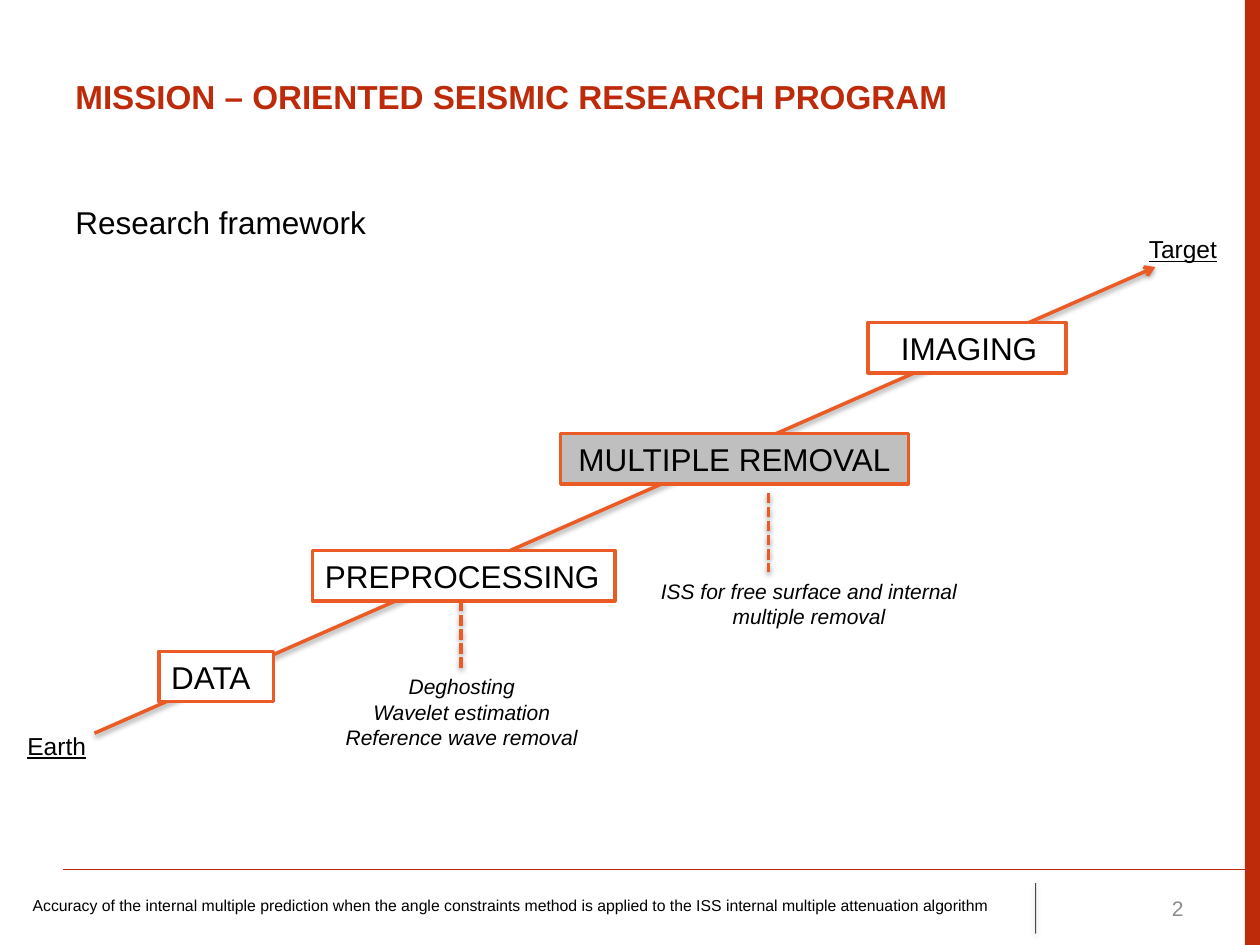
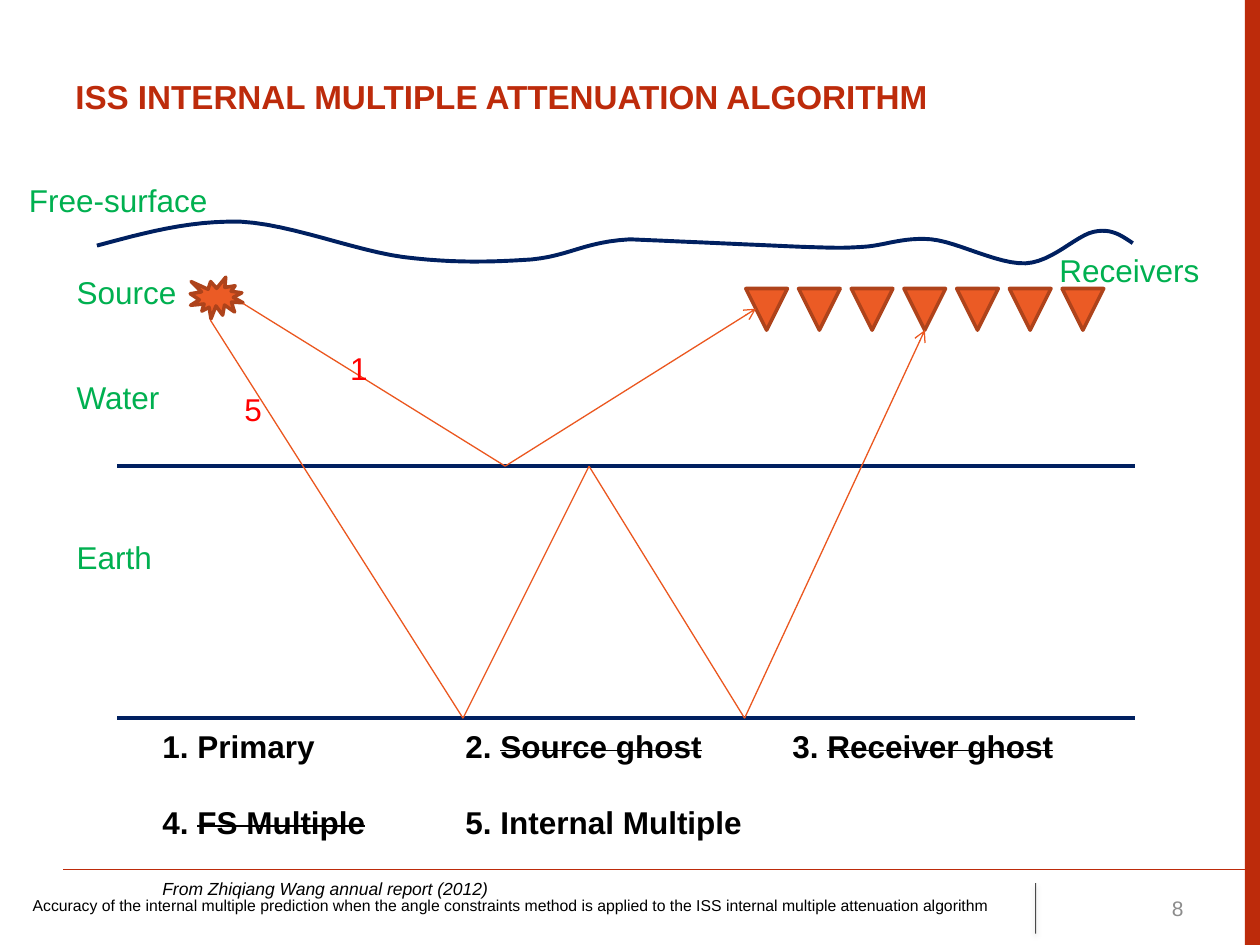
"""Build two seismic research slides with a shared frame."""
from dataclasses import dataclass
from itertools import pairwise

from lxml.etree import SubElement
from pptx import Presentation
from pptx.dml.color import RGBColor
from pptx.enum.shapes import MSO_CONNECTOR, MSO_SHAPE
from pptx.enum.text import MSO_ANCHOR, PP_ALIGN
from pptx.oxml.ns import qn
from pptx.util import Pt

HUES = {
    "red": "BD2B0B", "orange": "EB5B25", "ray": "EB571F", "rust": "AE431B",
    "navy": "002060", "green": "00B050", "mark": "FF0000", "black": "000000",
    "gray": "8C8C8C", "silver": "BFBFBF", "white": "FFFFFF",
}
FONT = "Arial"
FOOTER = ("Accuracy of the internal multiple prediction when the angle constraints "
          "method is applied to the ISS internal multiple attenuation algorithm")
LEFT, MID, RIGHT = PP_ALIGN.LEFT, PP_ALIGN.CENTER, PP_ALIGN.RIGHT


@dataclass(frozen=True)
class Style:
    size: float
    hue: str = "black"
    bold: bool = False
    slant: bool = False
    under: bool = False
    strike: bool = False


@dataclass(frozen=True)
class Label:
    text: str
    left: float
    top: float
    width: float
    style: Style
    align: PP_ALIGN = LEFT
    height: float = 28.8
    inset: float = 7.2
    anchor: MSO_ANCHOR = MSO_ANCHOR.TOP


@dataclass(frozen=True)
class Stage:
    text: str
    left: float
    top: float
    width: float
    fill: str = "white"
    inset: float = 7.2
    align: PP_ALIGN = LEFT


@dataclass(frozen=True)
class Pen:
    hue: str
    width: float
    dash: str = ""
    arrow: bool = False
    shade: bool = False
    alpha: int = 100


HEAD = Style(19, "red", bold=True)
BODY = Style(18)
NOTE = Style(12, slant=True)
END = Style(14, under=True)
ZONE = Style(18, "green")
MARK = Style(18, "mark")
KEY = Style(18, bold=True)
CUT = Style(18, bold=True, strike=True)
CREDIT = Style(10, slant=True)

STAGES = [
    Stage("MULTIPLE REMOVAL", 320.4, 247.7, 198.7, "silver", align=MID),
    Stage("DATA", 90.7, 372.2, 65.5),
    Stage("PREPROCESSING", 178.6, 314.6, 172.8),
    Stage("IMAGING", 496.1, 184.3, 113, inset=18.7),
]
FRAME = [
    Label("Research framework", 36, 112.4, 647.3, BODY),
    Label("Target", 649.4, 130.3, 67.7, END),
    Label("Earth", 8.6, 414, 67.7, END),
    Label("Deghosting\nWavelet estimation\nReference wave removal",
          190.1, 381.6, 147.6, NOTE, MID, 51.1),
    Label("ISS for free surface and internal multiple removal",
          365.8, 326.9, 193, NOTE, MID, 36),
]
ZONES = [
    Label("Source", 36.7, 152.6, 89.3, ZONE),
    Label("Receivers", 598.3, 139.7, 95.8, ZONE),
    Label("Water", 36.7, 212.4, 84.2, ZONE),
    Label("Free-surface", 9.4, 100.1, 135.4, ZONE),
    Label("Earth", 36.7, 303.8, 84.2, ZONE),
    Label("1", 193, 195.8, 18, MARK),
    Label("5", 132.5, 219.6, 18, MARK),
]
BEDS = [266.4, 410.4]
RAYS = [
    [(139, 173.5), (288.7, 266.4), (432, 176.4)],
    [(120.2, 182.9), (264.6, 410.4), (336.6, 266.4), (425.5, 410.4), (528.5, 188.6)],
]
WAVE = [
    [(55.4, 140.4), (82.1, 133.2), (108, 126), (137.5, 126.7)],
    [(137.5, 126.7), (166.3, 128.2), (203, 143.3), (230.4, 146.9)],
    [(230.4, 146.9), (258.5, 150.5), (282.2, 149.8), (303.8, 148.3)],
    [(303.8, 148.3), (325.4, 146.2), (334.1, 138.2), (360, 136.8)],
    [(360, 136.8), (393, 138.2), (426, 139.7), (458.6, 141.1)],
    [(458.6, 141.1), (481, 141.8), (481, 141.8), (493.2, 141.1)],
    [(493.2, 141.1), (505.4, 140.4), (516.2, 135.4), (532.1, 136.8)],
    [(532.1, 136.8), (547.2, 138.2), (570.2, 151.2), (586.1, 150.5)],
    [(586.1, 150.5), (601.2, 149.8), (614.9, 134.6), (625, 132.5)],
    [(625, 132.5), (635, 130.3), (640.8, 134.6), (647.3, 139)],
]
LEGEND = [
    [("1. Primary\t2. ", KEY), ("Source ghost", CUT), ("\t3. ", KEY), ("Receiver ghost", CUT)],
    [("4. ", KEY), ("FS Multiple", CUT), ("\t5. Internal Multiple", KEY)],
    [("From Zhiqiang Wang annual report (2012)", CREDIT)],
]
STOPS = [173.2, 360]


def tint(name: str) -> RGBColor:
    return RGBColor.from_string(HUES[name])


def add_run(para, text: str, style: Style) -> None:
    run = para.add_run()
    run.text = text
    font = run.font
    font.name, font.size = FONT, Pt(style.size)
    font.bold, font.italic, font.underline = style.bold, style.slant, style.under
    font.color.rgb = tint(style.hue)
    if style.strike:
        font._element.set("strike", "sngStrike")


def set_frame(frame, inset: float, anchor: MSO_ANCHOR) -> None:
    frame.word_wrap = True
    frame.vertical_anchor = anchor
    frame.margin_left = Pt(inset)


def fill_text(frame, text: str, style: Style, align: PP_ALIGN) -> None:
    for i, line in enumerate(text.split("\n")):
        para = frame.add_paragraph() if i else frame.paragraphs[0]
        para.alignment = align
        add_run(para, line, style)


def add_label(slide, label: Label) -> None:
    box = slide.shapes.add_textbox(
        Pt(label.left), Pt(label.top), Pt(label.width), Pt(label.height))
    set_frame(box.text_frame, label.inset, label.anchor)
    fill_text(box.text_frame, label.text, label.style, label.align)


def add_box(slide, kind: MSO_SHAPE, left: float, top: float, width: float,
            height: float, fill: str, edge: str = ""):
    box = slide.shapes.add_shape(kind, Pt(left), Pt(top), Pt(width), Pt(height))
    box.shadow.inherit = False
    box.fill.solid()
    box.fill.fore_color.rgb = tint(fill)
    if edge:
        box.line.color.rgb = tint(edge)
        box.line.width = Pt(2)
    else:
        box.line.fill.background()
    return box


def add_line(slide, start: tuple, end: tuple, pen: Pen) -> None:
    wire = slide.shapes.add_connector(
        MSO_CONNECTOR.STRAIGHT, *(Pt(v) for v in (*start, *end)))
    wire.line.color.rgb = tint(pen.hue)
    wire.line.width = Pt(pen.width)
    props = wire._element.spPr
    stroke = props.find(qn("a:ln"))
    if pen.alpha < 100:
        SubElement(stroke.find(".//" + qn("a:srgbClr")), qn("a:alpha"),
                   val=str(pen.alpha * 1000))
    if pen.dash:
        SubElement(stroke, qn("a:prstDash"), val=pen.dash)
    if pen.arrow:
        SubElement(stroke, qn("a:tailEnd"), type="arrow")
    effect = SubElement(props, qn("a:effectLst"))
    if pen.shade:
        cast = SubElement(effect, qn("a:outerShdw"), blurRad=str(Pt(3.1)),
                          dist=str(Pt(1.6)), dir="5400000", rotWithShape="0")
        color = SubElement(cast, qn("a:srgbClr"), val=HUES["black"])
        SubElement(color, qn("a:alpha"), val="38000")


def add_wave(slide, curves: list, steps: int = 12) -> None:
    def spot(curve: list, t: float) -> tuple:
        parts = ((1 - t) ** 3, 3 * t * (1 - t) ** 2, 3 * t * t * (1 - t), t ** 3)
        return tuple(Pt(sum(w * p[k] for w, p in zip(parts, curve))) for k in (0, 1))

    spots = [spot(curve, i / steps) for curve in curves for i in range(1, steps + 1)]
    path = slide.shapes.build_freeform(*(Pt(v) for v in curves[0][0]))
    path.add_line_segments(spots, close=False)
    wave = path.convert_to_shape()
    wave.shadow.inherit = False
    wave.fill.background()
    wave.line.color.rgb = tint("navy")
    wave.line.width = Pt(2.25)


def add_key(slide) -> None:
    box = slide.shapes.add_textbox(Pt(85.7), Pt(412), Pt(558), Pt(87))
    frame = box.text_frame
    set_frame(frame, 7.2, MSO_ANCHOR.TOP)
    for i, row in enumerate(LEGEND):
        para = frame.add_paragraph() if i else frame.paragraphs[0]
        if i:
            para.space_before = Pt(21.5)
        tabs = SubElement(para._p.get_or_add_pPr(), qn("a:tabLst"))
        for stop in STOPS:
            SubElement(tabs, qn("a:tab"), pos=str(Pt(stop)), algn="l")
        for text, style in row:
            add_run(para, text, style)


def add_base(deck, title: str, number: int):
    slide = deck.slides.add_slide(deck.slide_layouts[6])
    add_box(slide, MSO_SHAPE.RECTANGLE, 711.4, 0, 8.6, 540, "red")
    add_line(slide, (36, 496.8), (720, 496.8), Pen("red", 0.75))
    add_line(slide, (591.8, 504.7), (591.8, 533.5),
             Pen("black", 0.5, shade=True, alpha=70))
    centre = MSO_ANCHOR.MIDDLE
    add_label(slide, Label(title, 36, 21.6, 647.3, HEAD, height=67, anchor=centre))
    add_label(slide, Label(FOOTER, 18.7, 502.6, 556.6, Style(9), inset=0, anchor=centre))
    add_label(slide, Label(str(number), 626.4, 504.7, 56.9, Style(12, "gray"),
                           RIGHT, anchor=centre))
    return slide


def draw_stages(deck) -> None:
    slide = add_base(deck, "MISSION – ORIENTED SEISMIC RESEARCH PROGRAM", 2)
    add_line(slide, (54, 419), (660.2, 152.6), Pen("orange", 2, arrow=True, shade=True))
    for stage in STAGES:
        box = add_box(slide, MSO_SHAPE.RECTANGLE, stage.left, stage.top,
                      stage.width, 28.8, stage.fill, "orange")
        set_frame(box.text_frame, stage.inset, MSO_ANCHOR.MIDDLE)
        fill_text(box.text_frame, stage.text, BODY, stage.align)
    for label in FRAME:
        add_label(slide, label)
    for x, top, base in ((263.5, 343.4, 381.6), (439.2, 281.5, 326.9)):
        add_line(slide, (x, top), (x, base), Pen("orange", 2, "sysDash", shade=True))


def draw_rays(deck) -> None:
    slide = add_base(deck, "ISS INTERNAL MULTIPLE ATTENUATION ALGORITHM", 8)
    add_wave(slide, WAVE)
    add_box(slide, MSO_SHAPE.EXPLOSION1, 108.7, 158.4, 30.2, 23.8, "orange", "rust")
    for i in range(7):
        add_box(slide, MSO_SHAPE.FLOWCHART_MERGE, 426.2 + 30.12 * i, 164.9,
                23.8, 23.8, "orange", "rust")
    for bed in BEDS:
        add_line(slide, (67, bed), (648.7, bed), Pen("navy", 2.25))
    for ray in RAYS:
        for start, end in pairwise(ray):
            add_line(slide, start, end, Pen("ray", 0.75, arrow=end == ray[-1]))
    for label in ZONES:
        add_label(slide, label)
    add_key(slide)


def main() -> None:
    deck = Presentation()
    deck.slide_width, deck.slide_height = Pt(720), Pt(540)
    draw_stages(deck)
    draw_rays(deck)
    deck.save("out.pptx")


if __name__ == "__main__":
    main()
